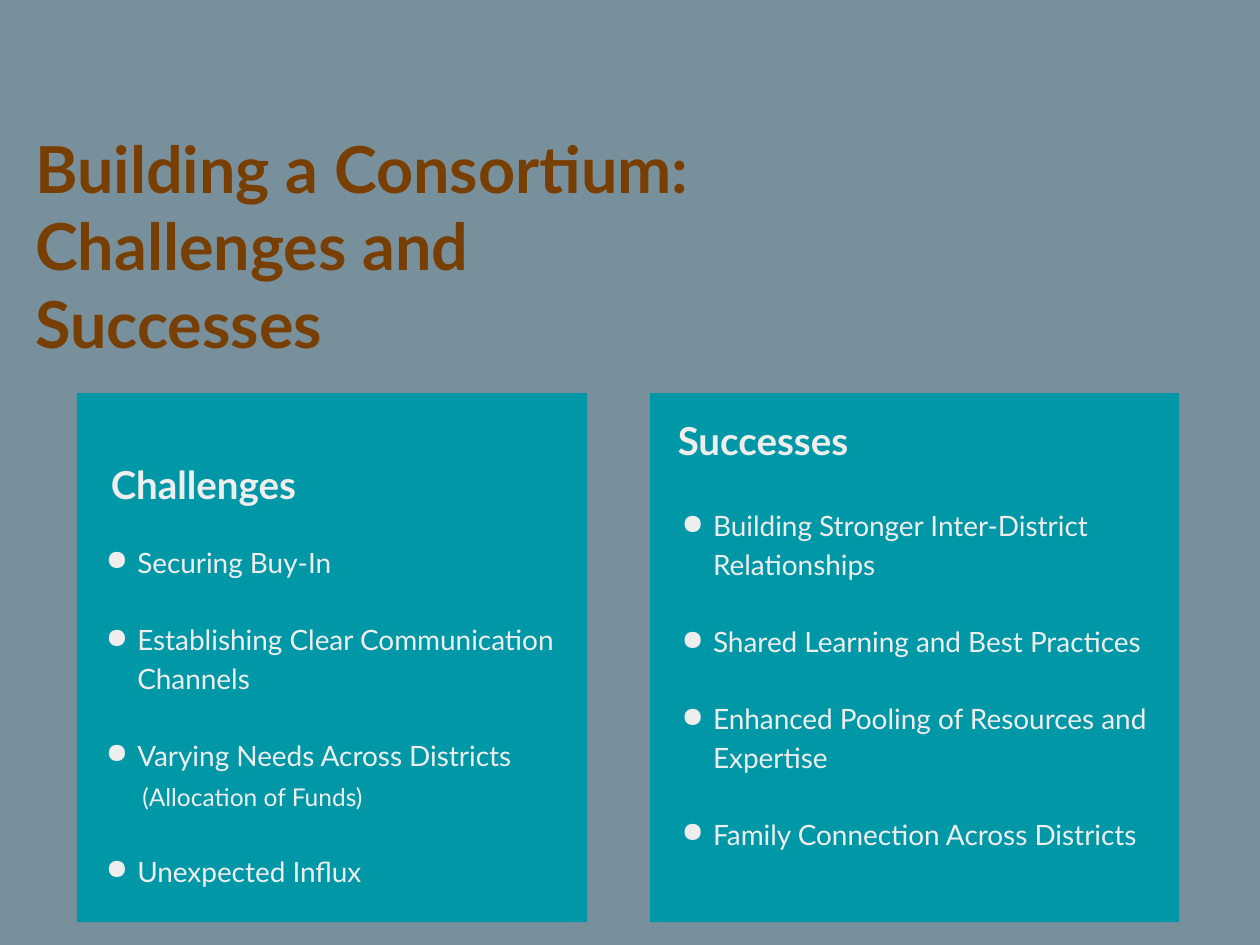
"""Build a slide that sets the challenges of a consortium beside its successes."""
from dataclasses import dataclass

from lxml.etree import SubElement
from pptx import Presentation
from pptx.dml.color import RGBColor
from pptx.enum.shapes import MSO_SHAPE as Shape
from pptx.enum.text import MSO_ANCHOR as Anchor, MSO_AUTO_SIZE as AutoSize, PP_ALIGN as Align
from pptx.oxml.ns import qn
from pptx.util import Inches, Pt

FONT = "Lato"
SLATE, TEAL, BROWN, PALE = "78909C", "0097A7", "783F04", "EEEEEE"
CARD_TOP, CARD_HEIGHT = 3.12, 4.2


@dataclass
class Area:
    left: float
    top: float
    width: float
    height: float

    def lengths(self) -> list:
        return [Inches(value) for value in (self.left, self.top, self.width, self.height)]


@dataclass
class Item:
    text: str
    bullet: bool = True


@dataclass
class Card:
    left: float
    width: float
    heading: str
    heading_area: Area
    list_area: Area
    items: list[Item]


CARDS = [
    Card(0.61, 4.05, "Challenges", Area(0.88, 3.66, 3.24, 0.37), Area(0.81, 4.29, 3.63, 2.75), [
        Item("Securing Buy-In"),
        Item("Establishing Clear Communication Channels"),
        Item("Varying Needs Across Districts"),
        Item("(Allocation of Funds)", bullet=False),
        Item("Unexpected Influx"),
    ]),
    Card(5.16, 4.2, "Successes", Area(5.38, 3.31, 3.36, 0.37), Area(5.38, 4, 3.77, 2.75), [
        Item("Building Stronger Inter-District Relationships"),
        Item("Shared Learning and Best Practices"),
        Item("Enhanced Pooling of Resources and Expertise"),
        Item("Family Connection Across Districts"),
    ]),
]


def color(value: str) -> RGBColor:
    return RGBColor.from_string(value)


def prepare_frame(frame) -> None:
    frame.margin_left = frame.margin_top = frame.margin_right = frame.margin_bottom = 0
    frame.word_wrap = True
    frame.auto_size = AutoSize.NONE
    frame.vertical_anchor = Anchor.TOP


def format_runs(para, size: float, fill: str, bold: bool = False) -> None:
    para.alignment = Align.LEFT
    for span in para.runs:
        span.font.name = FONT
        span.font.size = Pt(size)
        span.font.bold = bold
        span.font.color.rgb = color(fill)


def set_indent(para, left: float, first: float, bullet: bool) -> None:
    properties = para._p.get_or_add_pPr()
    properties.set("marL", str(Inches(left)))
    properties.set("indent", str(Inches(first)))
    if bullet:
        bullet_color = SubElement(properties, qn("a:buClr"))
        SubElement(bullet_color, qn("a:srgbClr"), val=PALE)
        SubElement(properties, qn("a:buChar"), char="●")


def add_text_box(shapes, area: Area):
    box = shapes.add_textbox(*area.lengths())
    prepare_frame(box.text_frame)
    return box.text_frame


def add_title(page, text: str, area: Area) -> None:
    title = page.shapes.title
    title.left, title.top, title.width, title.height = area.lengths()
    prepare_frame(title.text_frame)
    title.text_frame.text = text
    format_runs(title.text_frame.paragraphs[0], 37, BROWN, bold=True)


def add_items(shapes, area: Area, items: list[Item]) -> None:
    frame = add_text_box(shapes, area)
    frame.text = "\n".join(item.text for item in items)
    for index, (para, item) in enumerate(zip(frame.paragraphs, items)):
        para.line_spacing = 1.15
        if index:
            para.space_before = Pt(22 if item.bullet else 3)
        format_runs(para, 16 if item.bullet else 14, PALE)
        if item.bullet:
            set_indent(para, 0.28, -0.25, True)
        else:
            set_indent(para, 0.32, 0, False)


def add_card(page, card: Card) -> None:
    shapes = page.shapes.add_group_shape().shapes
    panel_area = Area(card.left, CARD_TOP, card.width, CARD_HEIGHT)
    panel = shapes.add_shape(Shape.RECTANGLE, *panel_area.lengths())
    panel.shadow.inherit = False
    panel.fill.solid()
    panel.fill.fore_color.rgb = color(TEAL)
    panel.line.fill.background()
    frame = add_text_box(shapes, card.heading_area)
    frame.text = card.heading
    format_runs(frame.paragraphs[0], 22, PALE, bold=True)
    add_items(shapes, card.list_area, card.items)


def main() -> None:
    deck = Presentation()
    deck.slide_width, deck.slide_height = Inches(10), Inches(7.5)
    page = deck.slides.add_slide(deck.slide_layouts.get_by_name("Title Only"))
    page.background.fill.solid()
    page.background.fill.fore_color.rgb = color(SLATE)
    add_title(page, "Building a Consortium: Challenges and Successes", Area(0.28, 1.02, 5.7, 1.87))
    for card in CARDS:
        add_card(page, card)
    deck.save("out.pptx")


if __name__ == "__main__":
    main()
